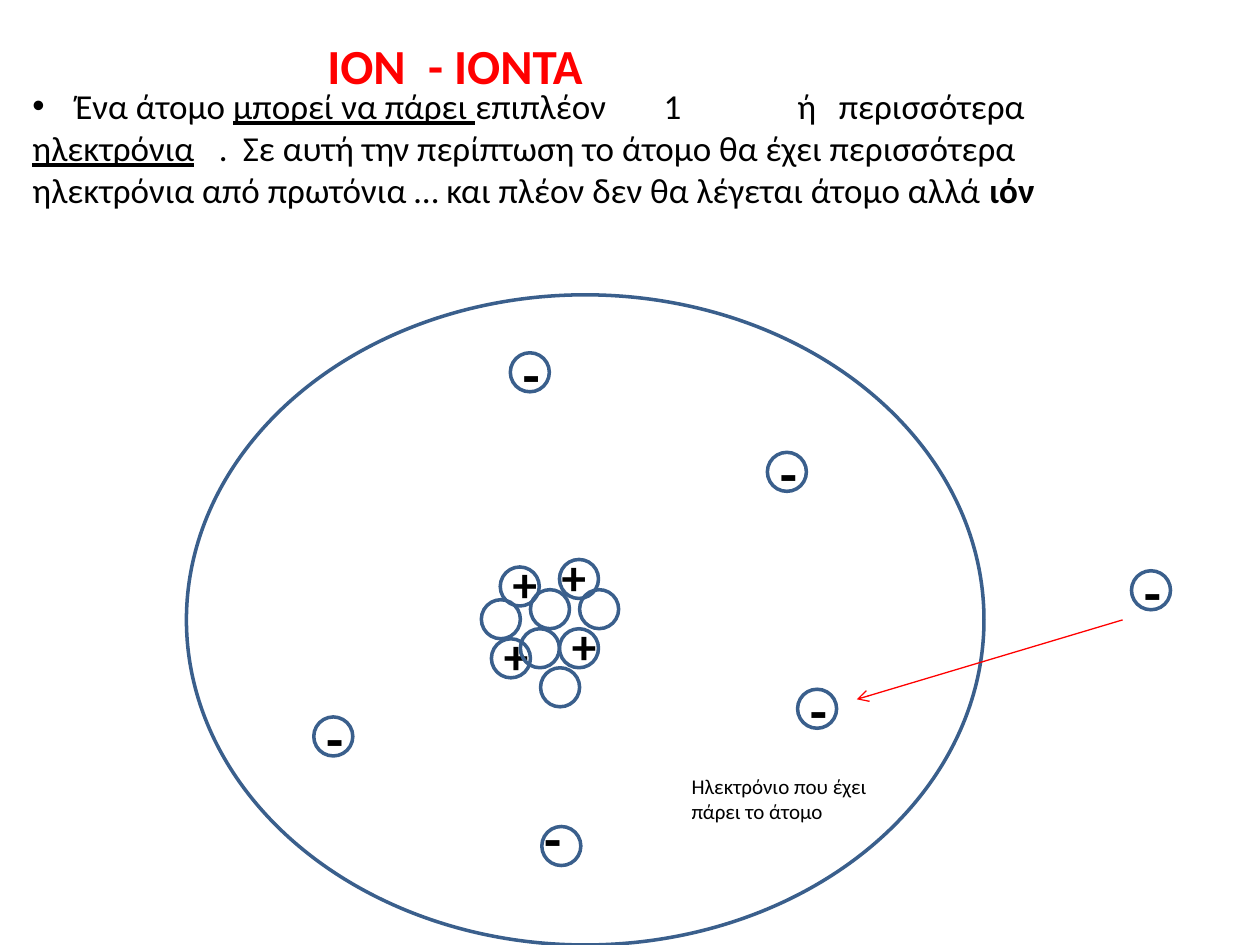
import pptx
import pptx.dml.color
import pptx.enum.shapes
import pptx.oxml
import pptx.oxml.ns
import pptx.util
from typing import NamedTuple

COLORS = {"outline": "3A5F8C", "accent": "FF0000", "text": "000000"}
FONT = "Calibri"
COLUMNS, ROWS = 100, 75
DIAMETER = 3.1

presentation = pptx.Presentation()
presentation.slide_width = pptx.util.Inches(10)
presentation.slide_height = pptx.util.Inches(7.5)
slide = presentation.slides.add_slide(presentation.slide_layouts[6])


class Particle(NamedTuple):
    column: float
    row: float
    sign: str = ""
    shift_column: float = 0
    shift_row: float = -1.55
    label_width: float = 3.9


class Run(NamedTuple):
    text: str
    bold: bool = False
    underline: bool = False


PARTICLES = [
    Particle(60.9, 35.9, "-"),
    Particle(24.9, 56.9, "-"),
    Particle(40.5, 28, "-"),
    Particle(43, 65.6, "-", -0.8, -2.3),
    Particle(89.8, 45.3, "-"),
    Particle(63.3, 54.7, "-"),
    Particle(44.4, 49.9, "+"),
    Particle(44.4, 44.4, "+", -0.8, label_width=2.3),
    Particle(39, 50.7, "+", label_width=2.3),
    Particle(39.7, 45, "+", label_width=2.3),
    Particle(41.3, 49.9),
    Particle(46, 46.8),
    Particle(42.1, 46.8),
    Particle(38.2, 47.6),
    Particle(42.9, 53),
]

EXPLANATION = [
    Run("\tΈνα άτομο "),
    Run("μπορεί να πάρει ", underline=True),
    Run("επιπλέον\t1\tή\tπερισσότερα "),
    Run("ηλεκτρόνια", underline=True),
    Run("\t.\tΣε αυτή την περίπτωση το άτομο θα έχει περισσότερα ηλεκτρόνια "
        "από πρωτόνια … και πλέον δεν θα λέγεται άτομο αλλά "),
    Run("ιόν", bold=True),
]


def across(columns: float) -> int:
    return round(presentation.slide_width * columns / COLUMNS)


def down(rows: float) -> int:
    return round(presentation.slide_height * rows / ROWS)


def area(column: float, row: float, width: float, height: float) -> tuple[int, int, int, int]:
    return across(column), down(row), across(width), down(height)


def color(name: str) -> pptx.dml.color.RGBColor:
    return pptx.dml.color.RGBColor.from_string(COLORS[name])


def add_text(runs: list[Run], *, column: float, row: float, width: float, height: float,
             size: float, fill: str = "text", bullet: str = "", tabs: tuple = ()) -> None:
    box = slide.shapes.add_textbox(*area(column, row, width, height))
    box.text_frame.word_wrap = True
    paragraph = box.text_frame.paragraphs[0]
    properties = paragraph._p.get_or_add_pPr()
    if bullet:
        properties.set("marL", "0")
        properties.set("indent", "0")
        for tag, name, value in (("a:buFont", "typeface", "Arial"), ("a:buChar", "char", bullet)):
            element = pptx.oxml.parse_xml(f"<{tag} {pptx.oxml.ns.nsdecls('a')}/>")
            element.set(name, value)
            properties.append(element)
    if tabs:
        tab_list = pptx.oxml.parse_xml(f"<a:tabLst {pptx.oxml.ns.nsdecls('a')}/>")
        for stop in tabs:
            tab_list.append(pptx.oxml.parse_xml(
                f'<a:tab {pptx.oxml.ns.nsdecls("a")} pos="{across(stop)}" algn="l"/>'))
        properties.append(tab_list)
    for part in runs:
        run = paragraph.add_run()
        run.text = part.text
        run.font.name = FONT
        run.font.size = pptx.util.Pt(size)
        run.font.bold = part.bold
        run.font.underline = part.underline
        run.font.color.rgb = color(fill)


def add_ellipse(column: float, row: float, width: float, height: float) -> None:
    shape = slide.shapes.add_shape(
        pptx.enum.shapes.MSO_SHAPE.OVAL, *area(column, row, width, height))
    shape.shadow.inherit = False
    shape.fill.background()
    shape.line.color.rgb = color("outline")
    shape.line.width = pptx.util.Pt(2)


def add_particle(particle: Particle) -> None:
    add_ellipse(particle.column, particle.row, DIAMETER, DIAMETER)
    if particle.sign:
        size, height = (32, 6.4) if particle.sign == "-" else (28, 5.7)
        add_text([Run(particle.sign, bold=True)],
                 column=particle.column + particle.shift_column,
                 row=particle.row + particle.shift_row,
                 width=particle.label_width, height=height, size=size)


def add_arrow(start: tuple[float, float], end: tuple[float, float]) -> None:
    connector = slide.shapes.add_connector(
        pptx.enum.shapes.MSO_CONNECTOR.STRAIGHT,
        across(start[0]), down(start[1]), across(end[0]), down(end[1]))
    connector.line.color.rgb = color("accent")
    connector.line.width = pptx.util.Pt(0.75)
    namespace = pptx.oxml.ns.nsdecls("a")
    connector.line._get_or_add_ln().append(
        pptx.oxml.parse_xml(f'<a:tailEnd {namespace} type="arrow"/>'))
    connector._element.spPr.append(pptx.oxml.parse_xml(f"<a:effectLst {namespace}/>"))


def main() -> None:
    add_text(EXPLANATION, column=1.6, row=6.2, width=83.6, height=14.5, size=20,
             bullet="•", tabs=(3.4, 14.8, 16.7, 50.1, 60.7, 64))
    add_ellipse(14.8, 23.4, 63.3, 51.6)
    for particle in PARTICLES:
        add_particle(particle)
    add_arrow((89.1, 49.2), (68, 55.5))
    add_text([Run("Ηλεκτρόνιο που έχει πάρει το άτομο")],
             column=53.9, row=60.9, width=18.7, height=5, size=12)
    add_text([Run("ΙΟΝ\t- ΙΟΝΤΑ", bold=True)], column=25, row=2.3, width=36.7, height=5.7,
             size=28, fill="accent", tabs=(8,))
    presentation.save("out.pptx")


if __name__ == "__main__":
    main()
